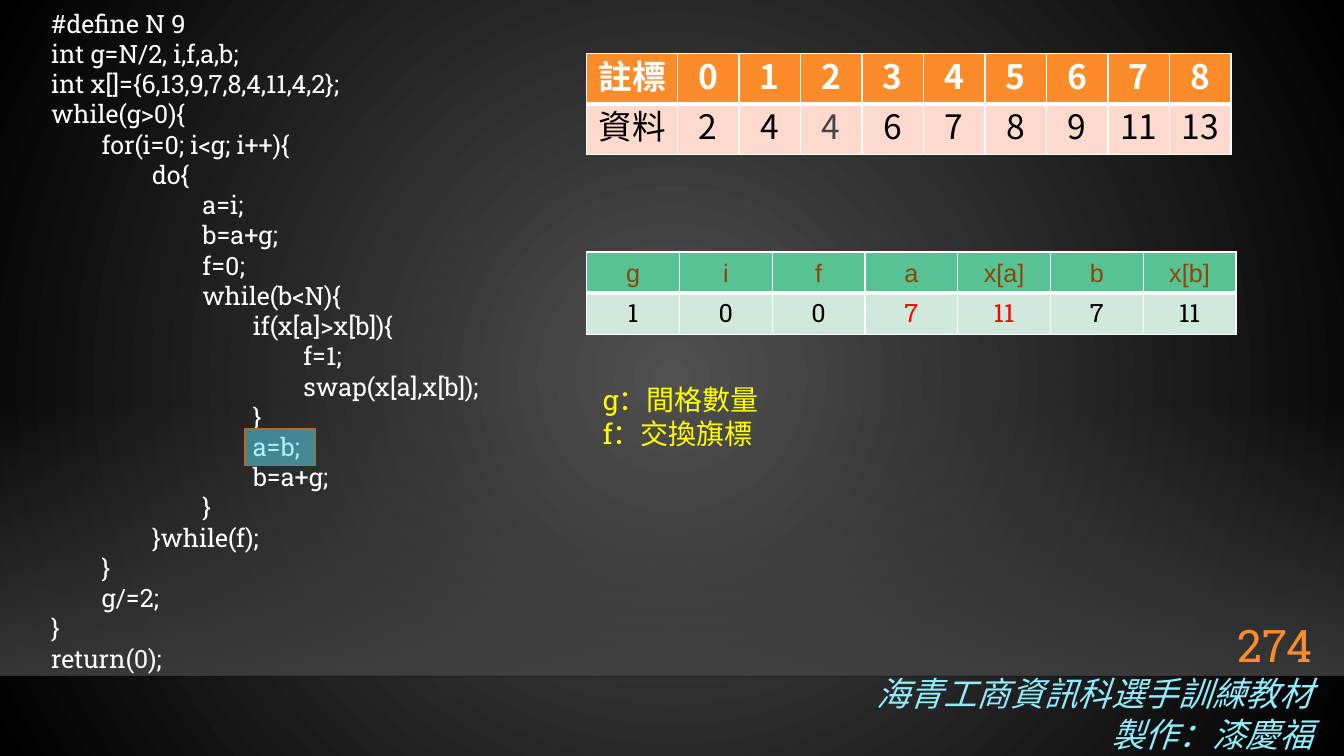
"""Build the slide tracing a comb sort step by step."""
from lxml.etree import SubElement
from pptx import Presentation
from pptx.dml.color import RGBColor
from pptx.enum.shapes import MSO_CONNECTOR, MSO_SHAPE
from pptx.enum.text import MSO_ANCHOR, PP_ALIGN
from pptx.oxml import parse_xml
from pptx.oxml.ns import nsdecls, qn
from pptx.util import Inches, Pt

WHITE = RGBColor(0xFF, 0xFF, 0xFF)
BLACK = RGBColor(0x00, 0x00, 0x00)
GRAY = RGBColor(0x45, 0x45, 0x45)
ORANGE = RGBColor(0xFB, 0x8C, 0x29)
PINK = RGBColor(0xFD, 0xDA, 0xCD)
GREEN = RGBColor(0x57, 0xC2, 0x93)
MINT = RGBColor(0xD1, 0xE9, 0xDC)
BROWN = RGBColor(0x8F, 0x45, 0x03)
RED = RGBColor(0xFF, 0x00, 0x00)
YELLOW = RGBColor(0xFF, 0xFF, 0x00)
SKY = RGBColor(0x91, 0xED, 0xFC)
CYAN = RGBColor(0x5A, 0xE4, 0xFB)
RUST = RGBColor(0xBA, 0x68, 0x1E)
NEAR_BLACK = RGBColor(0x00, 0x00, 0x01)
SLAB, CJK, ARIAL = "Roboto Slab", "Noto Sans CJK SC", "Arial"

CODE = """#define N 9
int g=N/2, i,f,a,b;
int x[]={6,13,9,7,8,4,11,4,2};
while(g>0){
	for(i=0; i<g; i++){
		do{
			a=i;
			b=a+g;
			f=0;
			while(b<N){
				if(x[a]>x[b]){
					f=1;
					swap(x[a],x[b]);
				}
				a=b;
				b=a+g;
			}
		}while(f);
	}
	g/=2;
}
return(0);"""


def style(paragraph, size, name, color, align=PP_ALIGN.LEFT, bold=False, italic=False):
    paragraph.alignment = align
    paragraph.line_spacing = Pt(size * 1.2)
    font = paragraph.font
    font.size, font.name, font.bold, font.italic = Pt(size), name, bold, italic
    font.color.rgb = color
    SubElement(font._rPr, qn("a:ea"), typeface=CJK)


def set_alpha(fill_parent, percent):
    for color in fill_parent.iter(qn("a:srgbClr")):
        SubElement(color, qn("a:alpha"), val=str(percent * 1000))


presentation = Presentation()
presentation.slide_width = Inches(13.33)
presentation.slide_height = Inches(7.5)
slide = presentation.slides.add_slide(presentation.slide_layouts[6])

slide.background.fill.solid()
background = slide.background._cSld.bg.bgPr
background.replace(background[0], parse_xml(
    f'<a:gradFill {nsdecls("a")} rotWithShape="1"><a:gsLst>'
    '<a:gs pos="0"><a:srgbClr val="505050"/></a:gs>'
    '<a:gs pos="100000"><a:srgbClr val="000000"/></a:gs></a:gsLst>'
    '<a:path path="circle"><a:fillToRect l="50000" t="50000" r="50000" b="50000"/></a:path>'
    '</a:gradFill>'))

floor = slide.shapes.add_shape(
    MSO_SHAPE.RECTANGLE, 0, Inches(3.96), presentation.slide_width, Inches(2.74))
floor.shadow.inherit = False
floor.line.fill.background()
floor.fill.gradient()
floor.fill.gradient_angle = 270
for stop, position, opacity in zip(floor.fill.gradient_stops, (0, 1), (0, 80)):
    stop.position = position
    stop.color.rgb = GRAY
    set_alpha(stop._gs, opacity)

horizon = slide.shapes.add_connector(
    MSO_CONNECTOR.STRAIGHT, 0, Inches(6.71), presentation.slide_width, Inches(6.71))
horizon.line.width = Pt(1)
horizon.line.color.rgb = NEAR_BLACK
set_alpha(horizon._element.spPr, 20)
SubElement(horizon._element.spPr, qn("a:effectLst"))

RIGHT = PP_ALIGN.RIGHT
texts = [
    ("海青工商資訊科選手訓練教材\n製作：漆慶福", 8.54, 6.63, 4.58, 0.91, (24, CJK, SKY, RIGHT, False, True)),
    ("274", 11.74, 6.08, 1.38, 0.55, (32, SLAB, ORANGE, RIGHT)),
    (CODE, 0.41, 0.03, 5.44, 6.77, (18, SLAB, WHITE)),
    ("g：間格數量\nf：交換旗標", 5.88, 3.75, 1.78, 0.77, (20, SLAB, YELLOW)),
]
for text, left, top, width, height, look in texts:
    box = slide.shapes.add_textbox(Inches(left), Inches(top), Inches(width), Inches(height))
    box.text_frame.word_wrap = True
    box.text_frame.text = text
    for paragraph in box.text_frame.paragraphs:
        if text == CODE:
            tabs = SubElement(paragraph._p.get_or_add_pPr(), qn("a:tabLst"))
            for level in range(1, 6):
                SubElement(tabs, qn("a:tab"), pos=str(Inches(0.5 * level)), algn="l")
        style(paragraph, *look)

TOP, MIDDLE = MSO_ANCHOR.TOP, MSO_ANCHOR.MIDDLE
array_rows = [["註標", *"012345678"], ["資料", "2", "4", "4", "6", "7", "8", "9", "11", "13"]]
trace_rows = [["g", "i", "f", "a", "x[a]", "b", "x[b]"], ["1", "0", "0", "7", "11", "7", "11"]]
tables = [
    (array_rows, 0.53, 0.5, [0.9] + [0.61] * 9, TOP, 24, (ORANGE, PINK),
     (CJK, CJK), (WHITE, BLACK), True, {3: GRAY}),
    (trace_rows, 2.5, 0.41, [0.92] * 7, MIDDLE, 18, (GREEN, MINT),
     (ARIAL, SLAB), (BROWN, BLACK), False, {3: RED, 4: RED}),
]
for rows, top, row_height, widths, anchor, size, fills, fonts, colors, bold_header, accents in tables:
    table = slide.shapes.add_table(
        2, len(widths), Inches(5.82), Inches(top), Inches(6.41), Inches(2 * row_height)).table
    for column, width in zip(table.columns, widths):
        column.width = Inches(width)
    for row_index, row in enumerate(rows):
        table.rows[row_index].height = Inches(row_height)
        edges = {"lnL": 1, "lnR": 1, "lnT": (1, 3)[row_index], "lnB": (3, 1)[row_index]}
        for column_index, value in enumerate(row):
            cell = table.cell(row_index, column_index)
            cell.text = value
            cell.vertical_anchor = anchor
            color = accents.get(column_index, BLACK) if row_index else colors[0]
            style(cell.text_frame.paragraphs[0], size, fonts[row_index], color,
                  PP_ALIGN.CENTER, bold_header and row_index == 0)
            properties = cell._tc.get_or_add_tcPr()
            for edge, points in edges.items():
                line = SubElement(properties, qn(f"a:{edge}"), w=str(Pt(points)))
                SubElement(SubElement(line, qn("a:solidFill")), qn("a:srgbClr"), val=str(WHITE))
            cell.fill.solid()
            cell.fill.fore_color.rgb = fills[row_index]

highlight = slide.shapes.add_shape(
    MSO_SHAPE.RECTANGLE, Inches(2.43), Inches(4.26), Inches(0.7), Inches(0.36))
highlight.shadow.inherit = False
highlight.fill.solid()
highlight.fill.fore_color.rgb = CYAN
set_alpha(highlight._element.spPr, 50)
highlight.line.color.rgb = RUST
highlight.line.width = Pt(1.25)

presentation.save("out.pptx")
